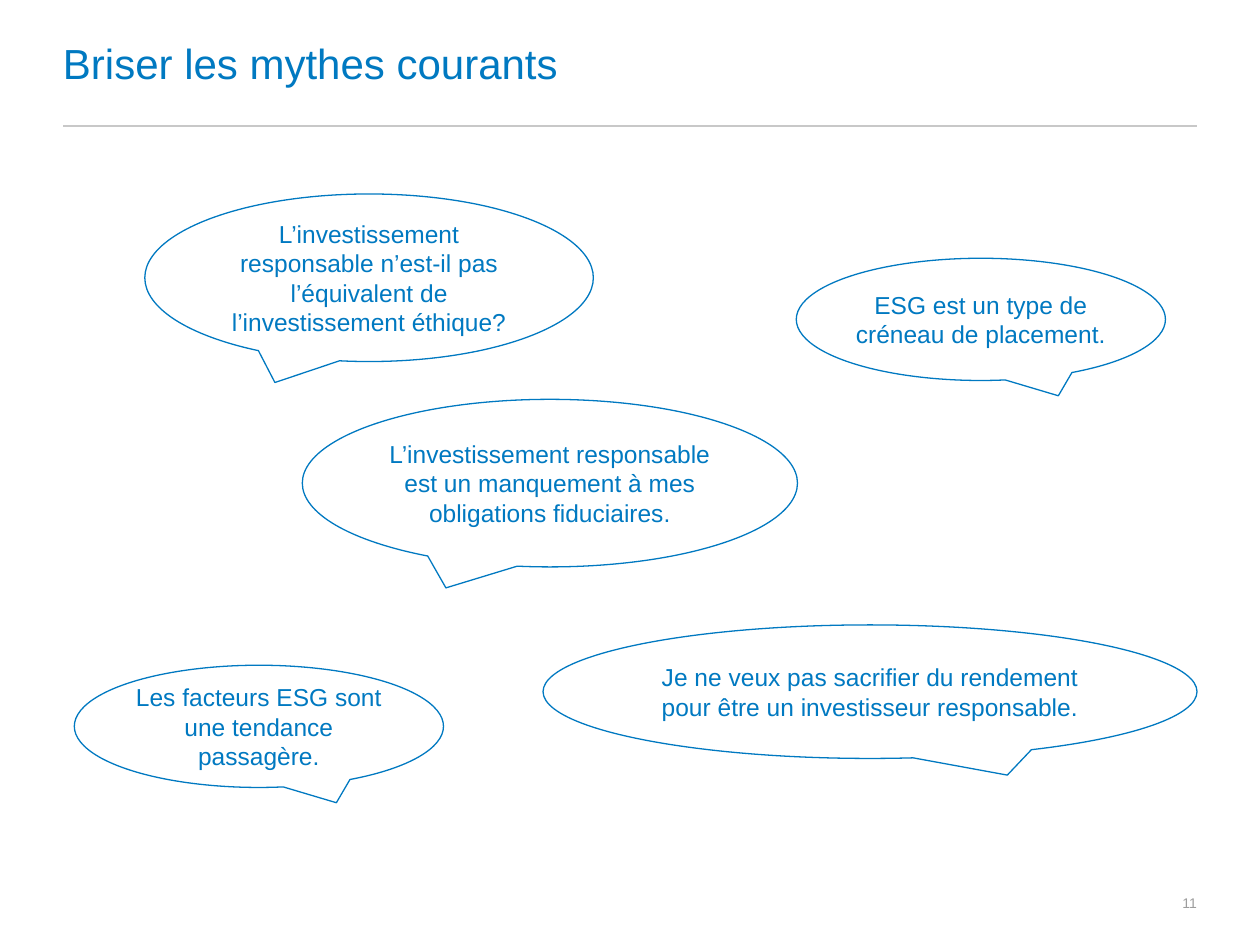
from dataclasses import dataclass

from lxml import etree
from pptx import Presentation
from pptx import util as u
from pptx.dml.color import RGBColor
from pptx.enum import shapes, text
from pptx.oxml.ns import qn


@dataclass(frozen=True)
class Theme:
    """Colours, font and sizes of the slide."""
    blue: RGBColor = RGBColor(0x00, 0x79, 0xC1)
    rule: RGBColor = RGBColor(0xC8, 0xC8, 0xC8)
    grey: RGBColor = RGBColor(0x9D, 0x9D, 0x9D)
    font: str = "Arial"
    title: int = 24
    body: int = 14
    number: int = 8
    line: float = 0.75


THEME = Theme()
TAIL_LEFT, TAIL_RIGHT = -0.21, 0.21

MYTHS = [
    ("L’investissement responsable n’est-il pas l’équivalent de l’investissement éthique?",
     (1.15, 1.54, 3.56, 1.33), TAIL_LEFT),
    ("ESG est un type de créneau de placement.",
     (6.32, 2.05, 2.93, 0.97), TAIL_RIGHT),
    ("L’investissement responsable est un manquement à mes obligations fiduciaires.",
     (2.4, 3.17, 3.93, 1.33), TAIL_LEFT),
    ("Je ne veux pas sacrifier du rendement pour être un investisseur responsable.",
     (4.31, 4.96, 5.19, 1.06), TAIL_RIGHT),
    ("Les facteurs ESG sont une tendance passagère.",
     (0.59, 5.28, 2.93, 0.97), TAIL_RIGHT),
]


def write(shape, wording, size, color, align):
    """Fill a shape with one vertically centred paragraph without insets."""
    frame = shape.text_frame
    frame.word_wrap = True
    frame.vertical_anchor = text.MSO_ANCHOR.MIDDLE
    frame.margin_left = frame.margin_top = frame.margin_right = frame.margin_bottom = 0
    paragraph = frame.paragraphs[0]
    paragraph.text = wording
    paragraph.alignment = align
    paragraph.font.name = THEME.font
    paragraph.font.size = u.Pt(size)
    paragraph.font.color.rgb = color


def add_header(slide, wording, box):
    """Place the title in the box and a rule along its bottom edge."""
    left, top, width, height = map(u.Inches, box)
    title = slide.shapes.add_textbox(left, top, width, height)
    write(title, wording, THEME.title, THEME.blue, text.PP_ALIGN.LEFT)
    bottom = top + height
    rule = slide.shapes.add_connector(
        shapes.MSO_CONNECTOR.STRAIGHT, left, bottom, left + width, bottom)
    rule.line.color.rgb = THEME.rule
    rule.line.width = u.Pt(THEME.line)
    etree.SubElement(rule._element.spPr, qn("a:effectLst"))


def add_myth(slide, wording, box, tail):
    """Place one speech bubble, its tail leaning to the given side."""
    bubble = slide.shapes.add_shape(
        shapes.MSO_SHAPE.OVAL_CALLOUT, *map(u.Inches, box))
    bubble.adjustments[0] = tail
    bubble.shadow.inherit = False
    bubble.fill.background()
    bubble.line.color.rgb = THEME.blue
    bubble.line.width = u.Pt(THEME.line)
    write(bubble, wording, THEME.body, THEME.blue, text.PP_ALIGN.CENTER)


def add_page_number(slide, number, box):
    """Place the page number at the right of the box."""
    page = slide.shapes.add_textbox(*map(u.Inches, box))
    write(page, number, THEME.number, THEME.grey, text.PP_ALIGN.RIGHT)


def main():
    """Build and save the slide."""
    deck = Presentation()
    deck.slide_width, deck.slide_height = u.Inches(10), u.Inches(7.5)
    slide = deck.slides.add_slide(deck.slide_layouts[6])
    add_header(slide, "Briser les mythes courants", (0.5, 0, 9, 1))
    add_page_number(slide, "11", (9, 6.84, 0.5, 0.65))
    for wording, box, tail in MYTHS:
        add_myth(slide, wording, box, tail)
    deck.save("out.pptx")


if __name__ == "__main__":
    main()
